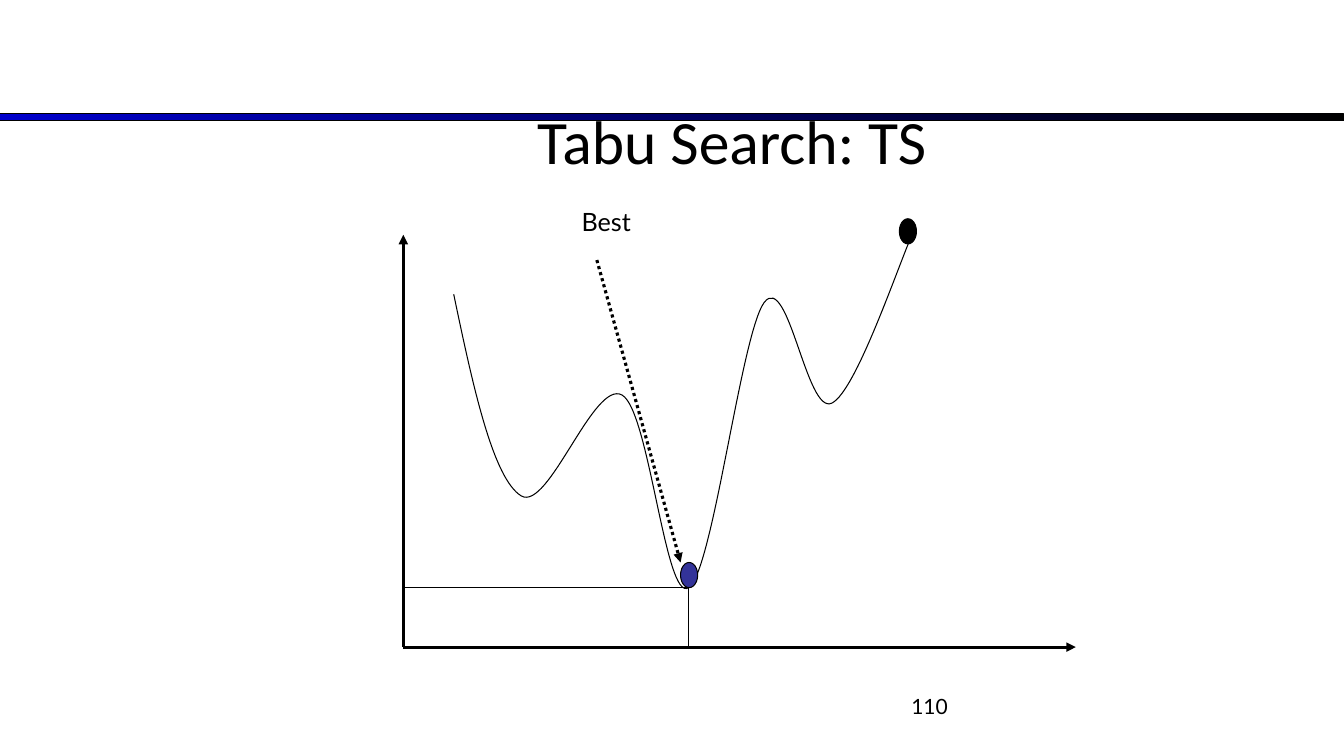
from lxml import etree
from pptx import Presentation
from pptx import util as u
from pptx.dml.color import RGBColor
from pptx.enum import dml, shapes, text
from pptx.oxml import ns

COLORS = {"ink": "000000", "bar": "0000CC", "best": "333399"}
rgb = {name: RGBColor.from_string(code) for name, code in COLORS.items()}

prs = Presentation()
prs.slide_width, prs.slide_height = u.Inches(13.33), u.Inches(7.5)
slide = prs.slides.add_slide(prs.slide_layouts[5])
tree = slide.shapes


def write(box, words, font_format, align):
    """Put one formatted paragraph in a title or text box."""
    frame = box.text_frame
    frame.word_wrap = True
    frame.text = words
    paragraph = frame.paragraphs[0]
    paragraph.alignment = align
    for key, value in font_format.items():
        setattr(paragraph.font, key, value)
    paragraph.font.color.rgb = rgb["ink"]


def outline(item, width):
    item.line.color.rgb = rgb["ink"]
    item.line.width = u.Pt(width)


# Header bar, placed behind the title
bar = tree.add_shape(shapes.MSO_SHAPE.RECTANGLE, 0, u.Inches(1.13),
                     prs.slide_width, u.Inches(0.07))
bar.shadow.inherit = False
bar.fill.gradient()
bar.fill.gradient_angle = 0
for stop, name, position in zip(bar.fill.gradient_stops, ("bar", "ink"), (0, 1)):
    stop.color.rgb = rgb[name]
    stop.position = position
outline(bar, 0.75)
tree.title._element.addprevious(bar._element)

# Title, page number and label
title = tree.title
title_place = {"left": 3, "top": 0.94, "width": 8.52, "height": 0.9}
for key, value in title_place.items():
    setattr(title, key, u.Inches(value))
title.text_frame.vertical_anchor = text.MSO_ANCHOR.MIDDLE
write(title, "Tabu Search: TS", {"name": "Calibri", "size": u.Pt(44)},
      text.PP_ALIGN.CENTER)

labels = [
    ("110", (7.17, 6.83, 2.33, 0.52), 15, text.PP_ALIGN.RIGHT),
    ("Best", (5.67, 2, 1.17, 0.4), 18, text.PP_ALIGN.LEFT),
]
for words, place, size, align in labels:
    label = tree.add_textbox(*map(u.Inches, place))
    write(label, words, {"name": "Lato", "size": u.Pt(size)}, align)

# Cost curve: a start point, then three control points per Bézier segment
curve_points = [
    (4.5, 2.92),
    (4.69, 3.83), (4.89, 4.75), (5.17, 4.92),
    (5.44, 5.08), (5.89, 3.76), (6.17, 3.92),
    (6.44, 4.07), (6.6, 5.99), (6.83, 5.83),
    (7.07, 5.68), (7.35, 3.31), (7.58, 3),
    (7.82, 2.69), (8, 4.12), (8.25, 4),
    (8.5, 3.88), (8.94, 2.54), (9.08, 2.25),
]
start, *controls = [(u.Inches(x), u.Inches(y)) for x, y in curve_points]
builder = tree.build_freeform(*start)
builder.add_line_segments(controls, close=False)
curve = builder.convert_to_shape()
curve.shadow.inherit = False
curve.fill.background()
outline(curve, 0.75)
segments = list(curve._element.iter(ns.qn("a:lnTo")))
for first in range(0, len(segments), 3):
    bezier = etree.Element(ns.qn("a:cubicBezTo"))
    segments[first].addprevious(bezier)
    for segment in segments[first:first + 3]:
        bezier.append(segment[0])
        segment.getparent().remove(segment)

# Axes, pointer to the best solution, and its guide lines
origin = (4, 6.42)
minimum = (6.83, 5.83)
lines = [
    (origin, (4, 2.33), 2.25, True, None),
    (origin, (10.67, 6.42), 2.25, True, None),
    ((5.92, 2.58), (6.75, 5.58), 2.25, True, dml.MSO_LINE.ROUND_DOT),
    (minimum, (minimum[0], origin[1]), 0.75, False, None),
    (minimum, (origin[0], minimum[1]), 0.75, False, None),
]
for begin, end, width, arrow, dash in lines:
    line = tree.add_connector(shapes.MSO_CONNECTOR.STRAIGHT,
                              *map(u.Inches, begin + end))
    outline(line, width)
    if dash:
        line.line.dash_style = dash
    if arrow:
        etree.SubElement(line.line._get_or_add_ln(), ns.qn("a:tailEnd"),
                         type="triangle")
    etree.SubElement(line._element.spPr, ns.qn("a:effectLst"))

# Current and best solutions
for left, top, name in [(8.92, 2.17, "ink"), (6.75, 5.58, "best")]:
    solution = tree.add_shape(shapes.MSO_SHAPE.OVAL, u.Inches(left), u.Inches(top),
                              u.Inches(0.17), u.Inches(0.25))
    solution.shadow.inherit = False
    solution.fill.solid()
    solution.fill.fore_color.rgb = rgb[name]
    outline(solution, 0.75)

prs.save("out.pptx")
